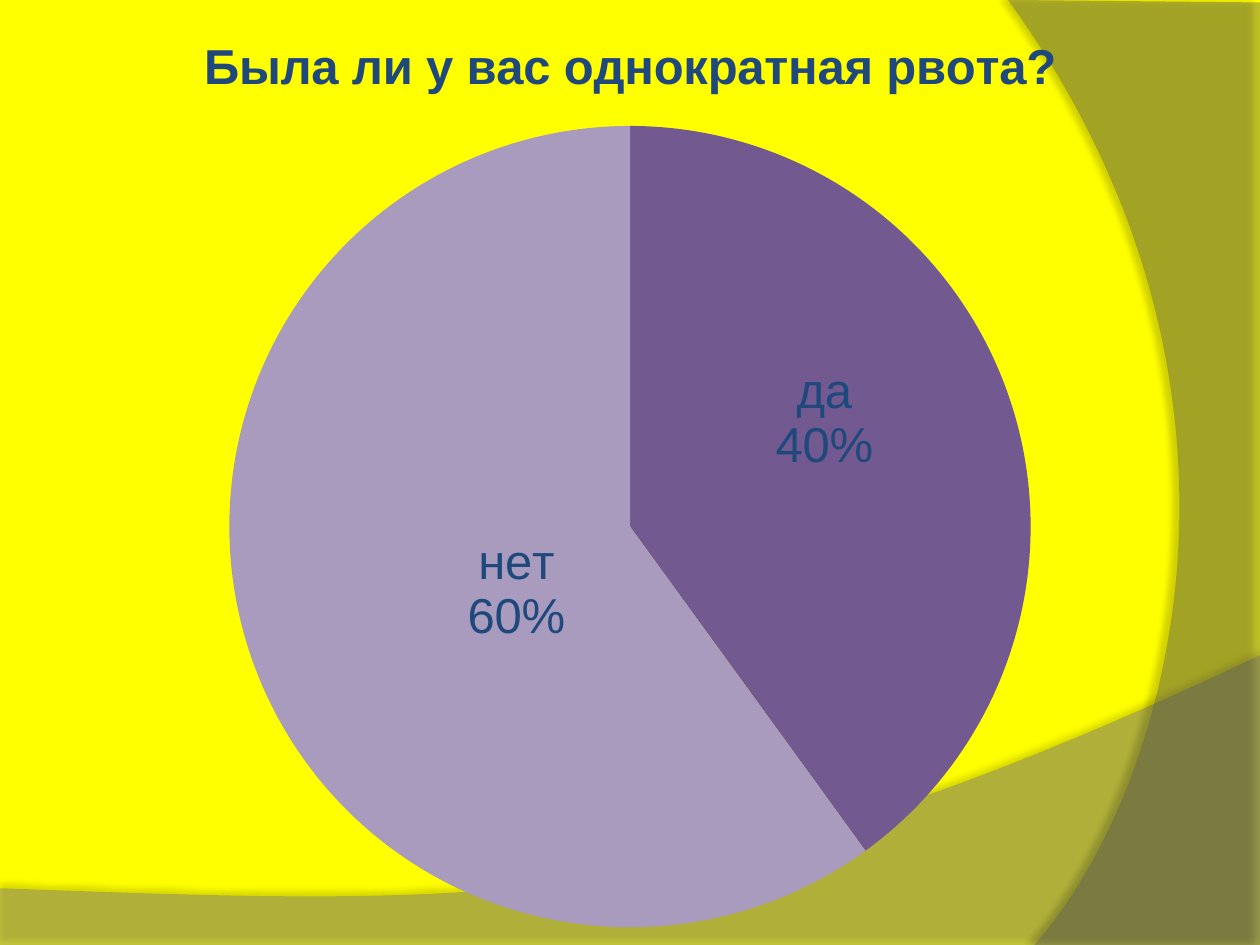
import pptx
import pptx.chart.data
import pptx.dml.color
import pptx.enum.chart
import pptx.oxml
import pptx.oxml.ns
import pptx.util
from pptx.dml.color import RGBColor
from pptx.util import Inches

YELLOW = RGBColor(0xFF, 0xFF, 0x00)
MID_GRAY = RGBColor(0x7F, 0x7F, 0x7F)
DARK_GRAY = RGBColor(0x5E, 0x5E, 0x5E)
NAVY = RGBColor(0x1F, 0x49, 0x7D)
VIOLET = RGBColor(0x72, 0x59, 0x90)
LILAC = RGBColor(0xA9, 0x9B, 0xBD)
FONT = "Arial"
QUESTION = "Была ли у вас однократная рвота?"
ANSWERS = [("да", 40, VIOLET, (0.03, -0.36)), ("нет", 60, LILAC, (0.61, 0.01))]


def format_font(font, size=28, bold=False, color=NAVY):
    font.name = FONT
    font.size = pptx.util.Pt(size)
    font.bold = bold
    font.color.rgb = color


def write_text(frame, text, **style):
    span = frame.paragraphs[0].add_run()
    span.text = text
    format_font(span.font, **style)


def chart_xml(body):
    return pptx.oxml.parse_xml(body.replace(
        ">", f" {pptx.oxml.ns.nsdecls('c', 'a')}>", 1))


def manual_layout(**parts):
    values = "".join(f'<c:{name} val="{value}"/>' for name, value in parts.items())
    return f"<c:layout><c:manualLayout>{values}</c:manualLayout></c:layout>"


def add_wave(page, corners, controls, color, opacity, shadow_opacity, distance, angle):
    outline = [(Inches(x), Inches(y)) for x, y in corners]
    builder = page.shapes.build_freeform(*outline[0])
    builder.add_line_segments(outline[1:], close=True)
    wave = builder.convert_to_shape()
    wave.fill.solid()
    wave.fill.fore_color.rgb = color
    wave.line.fill.background()
    wave.shadow.inherit = False
    properties = wave._element.spPr
    names = pptx.oxml.ns.nsdecls("a")
    points = "".join(
        f'<a:pt x="{Inches(x) - wave.left}" y="{Inches(y) - wave.top}"/>'
        for x, y in [*controls, corners[0]])
    closing = properties.find(".//" + pptx.oxml.ns.qn("a:close"))
    closing.addprevious(pptx.oxml.parse_xml(
        f"<a:cubicBezTo {names}>{points}</a:cubicBezTo>"))
    tint = properties.find(".//" + pptx.oxml.ns.qn("a:srgbClr"))
    tint.append(pptx.oxml.parse_xml(f'<a:alpha {names} val="{opacity * 1000}"/>'))
    effects = properties.find(pptx.oxml.ns.qn("a:effectLst"))
    effects.append(pptx.oxml.parse_xml(
        f'<a:outerShdw {names} blurRad="{pptx.util.Pt(4)}" '
        f'dist="{pptx.util.Pt(distance)}" dir="{angle * 60000}" rotWithShape="0">'
        f'<a:srgbClr val="000000"><a:alpha val="{shadow_opacity * 1000}"/></a:srgbClr>'
        '</a:outerShdw>'))


def add_background(page, left, top, width, height):
    right, bottom = left + width, top + height
    page.background.fill.solid()
    page.background.fill.fore_color.rgb = YELLOW
    floor = [(left, 7.05), (left, bottom + 0.01), (right, bottom + 0.01), (right, 5.2)]
    add_wave(page, floor, [(5.59, 7.29), (3.91, 7.19)], MID_GRAY, 45, 35, 3.5, 270)
    side = [(8, top), (right, top + 0.02), (right, bottom), (8.21, bottom)]
    add_wave(page, side, [(9.35, 6.19), (10.18, 3)], DARK_GRAY, 40, 45, 4, 180)


def add_labels(series, width, height):
    shown = "".join(
        f'<c:show{name} val="{int(name in ("CatName", "Percent"))}"/>'
        for name in ("LegendKey", "Val", "CatName", "SerName", "Percent", "BubbleSize"))
    settings = ('<c:numFmt formatCode="0%" sourceLinked="0"/><c:spPr><a:noFill/></c:spPr>'
                '<c:txPr><a:bodyPr/><a:p><a:pPr><a:defRPr sz="2800" b="0">'
                f'<a:solidFill><a:srgbClr val="{NAVY}"/></a:solidFill>'
                f'<a:latin typeface="{FONT}"/></a:defRPr></a:pPr></a:p></c:txPr>'
                f'<c:dLblPos val="ctr"/>{shown}<c:separator>\n</c:separator>')
    labels = "".join(
        f'<c:dLbl><c:idx val="{index}"/>{manual_layout(x=across / width, y=down / height)}'
        f'{settings}</c:dLbl>'
        for index, (_, _, _, (across, down)) in enumerate(ANSWERS))
    categories = series._element.find(pptx.oxml.ns.qn("c:cat"))
    categories.addprevious(chart_xml(f"<c:dLbls>{labels}{settings}</c:dLbls>"))


def add_answer_pie(page, left, top, width, height):
    data = pptx.chart.data.CategoryChartData()
    data.categories = [name for name, _, _, _ in ANSWERS]
    data.add_series(QUESTION, [value for _, value, _, _ in ANSWERS])
    chart = page.shapes.add_chart(
        pptx.enum.chart.XL_CHART_TYPE.PIE, Inches(left), Inches(top),
        Inches(width), Inches(height), data).chart
    format_font(chart.font, size=10)
    chart.has_legend = False
    chart.has_title = True
    write_text(chart.chart_title.text_frame, QUESTION, bold=True)
    chart.chart_title.include_in_layout = False
    title = chart.chart_title._element
    area = chart._chartSpace.chart.plotArea
    for owner in (title, area):
        for old in owner.findall(pptx.oxml.ns.qn("c:layout")):
            owner.remove(old)
    title.find(pptx.oxml.ns.qn("c:tx")).addnext(chart_xml(manual_layout(
        xMode="edge", yMode="edge", x=1.55 / width, y=0.21 / height)))
    diameter = 6.36
    area.insert(0, chart_xml(manual_layout(
        layoutTarget="inner", xMode="edge", yMode="edge",
        x=(width - diameter) / 2 / width, y=1 / height,
        w=diameter / width, h=diameter / height)))
    chart.plots[0].vary_by_categories = True
    series = chart.plots[0].series[0]
    for index, (_, _, color, _) in enumerate(ANSWERS):
        slice_format = series.points[index].format
        slice_format.fill.solid()
        slice_format.fill.fore_color.rgb = color
        slice_format.line.fill.background()
    add_labels(series, width, height)


def main():
    deck = pptx.Presentation()
    deck.slide_width = Inches(10)
    deck.slide_height = Inches(7.5)
    page = deck.slides.add_slide(deck.slide_layouts[6])
    box = (0, 0, 10, 7.5)
    add_background(page, *box)
    add_answer_pie(page, *box)
    deck.save("out.pptx")


if __name__ == "__main__":
    main()
